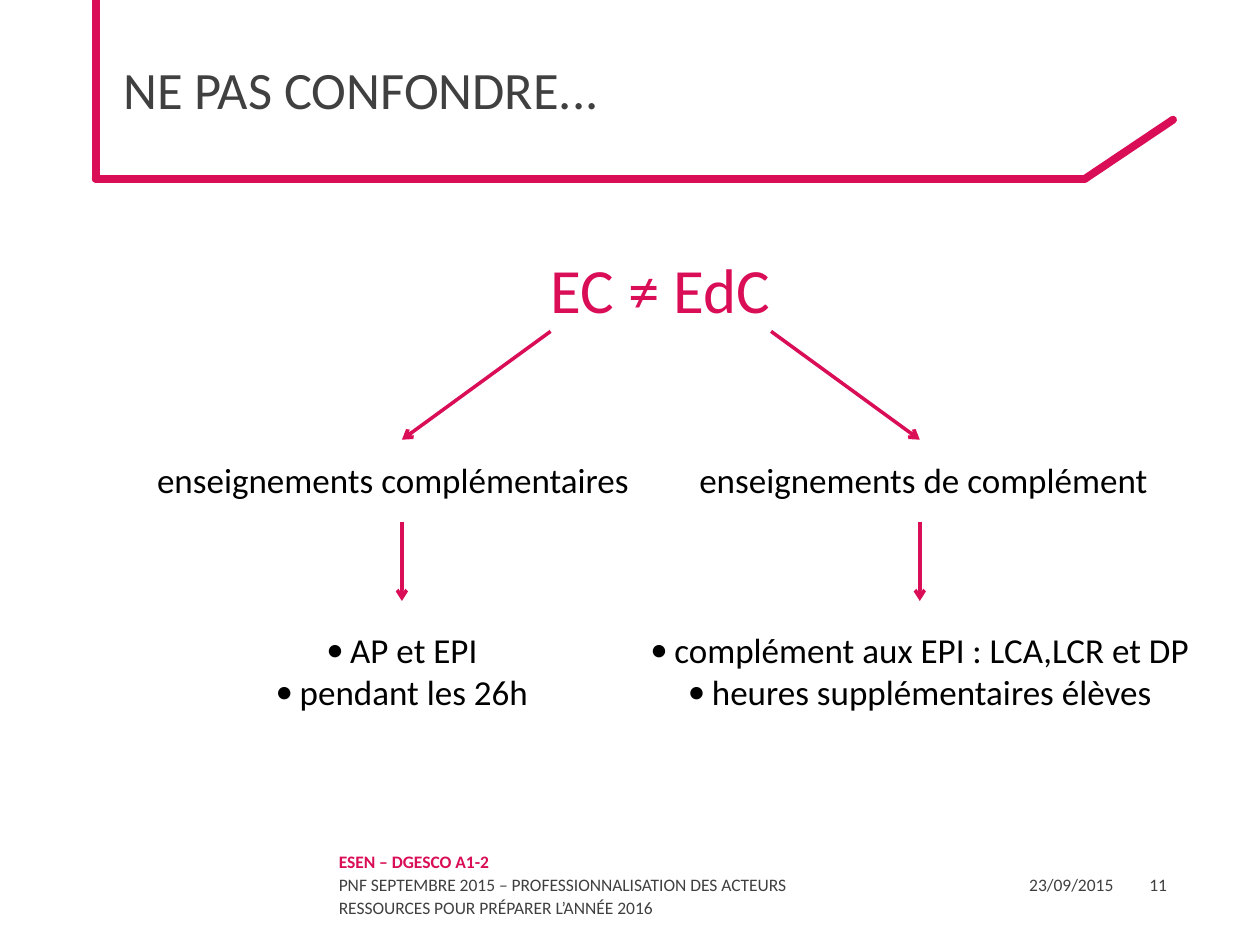
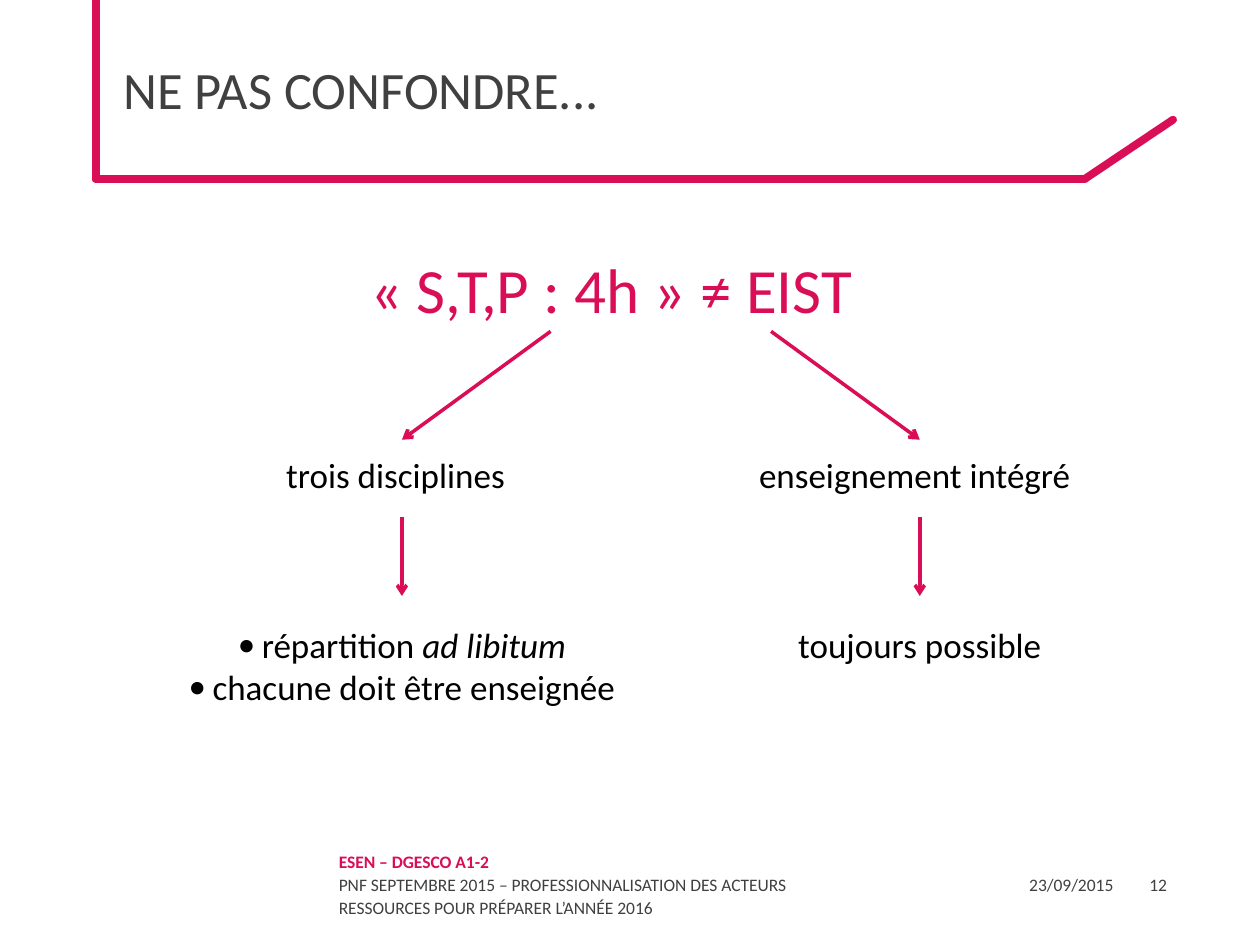
import pptx
import pptx.dml.color
import pptx.enum.shapes
import pptx.enum.text
import pptx.oxml.ns
import pptx.util
from lxml import etree

Inches = pptx.util.Inches
Pt = pptx.util.Pt
ALIGN = pptx.enum.text.PP_ALIGN
ANCHOR = pptx.enum.text.MSO_ANCHOR
qn = pptx.oxml.ns.qn

COLORS = {"accent": "DA0D57", "grey": "404040", "text": "000000"}
FONT = "Calibri"
TITLE = "NE PAS CONFONDRE..."
DATE = "23/09/2015"
FOOTER = (
    "ESEN – DGESCO A1-2",
    "PNF SEPTEMBRE 2015 – PROFESSIONNALISATION DES ACTEURS",
    "RESSOURCES POUR PRÉPARER L’ANNÉE 2016",
)
BAND_POINTS = ((0.76, 0), (0.76, 1.42), (8.61, 1.42), (9.31, 0.95))
FORK_STARTS = (4.37, 6.12)
COLUMNS = (3.19, 7.3)
BULLET_INDENT = 0.19

# Each column: label, then detail lines made of (plain, italic) parts
PAGES = (
    {
        "number": "11",
        "heading": "EC ≠ EdC",
        "heading_center": 5.24,
        "label_centers": (3.12, 7.33),
        "label_top": 3.59,
        "columns": (
            ("enseignements complémentaires",
             (("AP et EPI", ""), ("pendant les 26h", ""))),
            ("enseignements de complément",
             (("complément aux EPI : LCA,LCR et DP", ""),
              ("heures supplémentaires élèves", ""))),
        ),
    },
    {
        "number": "12",
        "heading": "«\u00a0S,T,P : 4h\u00a0» ≠ EIST",
        "heading_center": 4.85,
        "label_centers": (3.14, 7.26),
        "label_top": 3.55,
        "columns": (
            ("trois disciplines",
             (("répartition ", "ad libitum"), ("chacune doit être enseignée", ""))),
            ("enseignement intégré", (("toujours possible", ""),)),
        ),
    },
)


def format_para(para, size, color, align=ALIGN.LEFT, bold=False):
    para.alignment = align
    para.space_before = Pt(0)
    for span in para.runs:
        span.font.name = FONT
        span.font.size = Pt(size)
        span.font.bold = bold
        span.font.color.rgb = pptx.dml.color.RGBColor.from_string(COLORS[color])


def set_bullet(para, char=None):
    """Give the paragraph a hanging bullet, or none at all."""
    indent = Inches(BULLET_INDENT) if char else 0
    props = para._p.get_or_add_pPr()
    props.set("marL", str(indent))
    props.set("indent", str(-indent))
    if char:
        font = etree.SubElement(props, qn("a:buFont"))
        font.set("typeface", FONT)
        etree.SubElement(props, qn("a:buChar")).set("char", char)
    else:
        etree.SubElement(props, qn("a:buNone"))


def place(shape, left, top, width, height):
    shape.left, shape.top = Inches(left), Inches(top)
    shape.width, shape.height = Inches(width), Inches(height)


def add_text(page, frame, lines, anchor=ANCHOR.TOP):
    box = page.shapes.add_textbox(*map(Inches, frame))
    box.text_frame.word_wrap = True
    box.text_frame.vertical_anchor = anchor
    box.text_frame.text = "\n".join(lines)
    return box.text_frame.paragraphs


def add_line(page, start, end, width, arrow=False):
    line = page.shapes.add_connector(
        pptx.enum.shapes.MSO_CONNECTOR.STRAIGHT, *map(Inches, start + end))
    line.line.width = Pt(width)
    line.line.color.rgb = pptx.dml.color.RGBColor.from_string(COLORS["accent"])
    outline = line.line._get_or_add_ln()
    if arrow:
        etree.SubElement(outline, qn("a:tailEnd")).set("type", "arrow")
    else:
        outline.set("cap", "rnd")
    etree.SubElement(line._element.spPr, qn("a:effectLst"))


def add_frame(page, number):
    """Band, title and footer shared by all pages."""
    for start, end in zip(BAND_POINTS, BAND_POINTS[1:]):
        add_line(page, start, end, 4.5)

    title = page.shapes.title
    place(title, 0.88, 0, 8.62, 1.41)
    title.text_frame.text = TITLE
    title.text_frame.vertical_anchor = ANCHOR.MIDDLE
    format_para(title.text_frame.paragraphs[0], 30, "grey")

    paras = add_text(page, (2.59, 6.68, 5.05, 0.67), FOOTER, ANCHOR.MIDDLE)
    for index, para in enumerate(paras):
        format_para(para, 10, "grey" if index else "accent", bold=index == 0)
        para.line_spacing = Pt(13.2)
    for left, width, text, align in ((8.07, 0.9, DATE, ALIGN.LEFT),
                                     (8.86, 0.5, number, ALIGN.RIGHT)):
        para = add_text(page, (left, 6.81, width, 0.4), [text], ANCHOR.MIDDLE)[0]
        format_para(para, 10, "grey", align)
        para.line_spacing = Pt(13.2)


def add_heading(page, text, center):
    body = page.placeholders[1]
    width = 8
    place(body, center - width / 2, 1.94, width, 0.72)
    body.text_frame.text = text
    para = body.text_frame.paragraphs[0]
    set_bullet(para)
    format_para(para, 36, "accent", ALIGN.CENTER)


def add_details(page, center, top, lines):
    width = 4.6
    paras = add_text(page, (center - width / 2, top, width, 0.77),
                     [plain for plain, _ in lines])
    for para, (_, italic) in zip(paras, lines):
        if italic:
            span = para.add_run()
            span.text = italic
            span.font.italic = True
        if len(lines) > 1:
            set_bullet(para, "•")
        format_para(para, 20, "text", ALIGN.CENTER)


def add_column(page, fork_start, center, label_center, top, label, details):
    """Slanted arrow, label, vertical arrow and details, downwards."""
    add_line(page, (fork_start, 2.63), (center, 3.49), 2, arrow=True)
    width = 4.2
    para = add_text(page, (label_center - width / 2, top, width, 0.44), [label])[0]
    format_para(para, 20, "text", ALIGN.CENTER)
    add_line(page, (center, top + 0.55), (center, top + 1.18), 2, arrow=True)
    add_details(page, center, top + 1.35, details)


def main():
    deck = pptx.Presentation()
    deck.slide_width, deck.slide_height = Inches(10), Inches(7.5)
    for content in PAGES:
        page = deck.slides.add_slide(deck.slide_layouts[1])
        add_frame(page, content["number"])
        add_heading(page, content["heading"], content["heading_center"])
        for start, center, label_center, (label, details) in zip(
                FORK_STARTS, COLUMNS, content["label_centers"], content["columns"]):
            add_column(page, start, center, label_center, content["label_top"],
                       label, details)
    deck.save("out.pptx")


if __name__ == "__main__":
    main()
